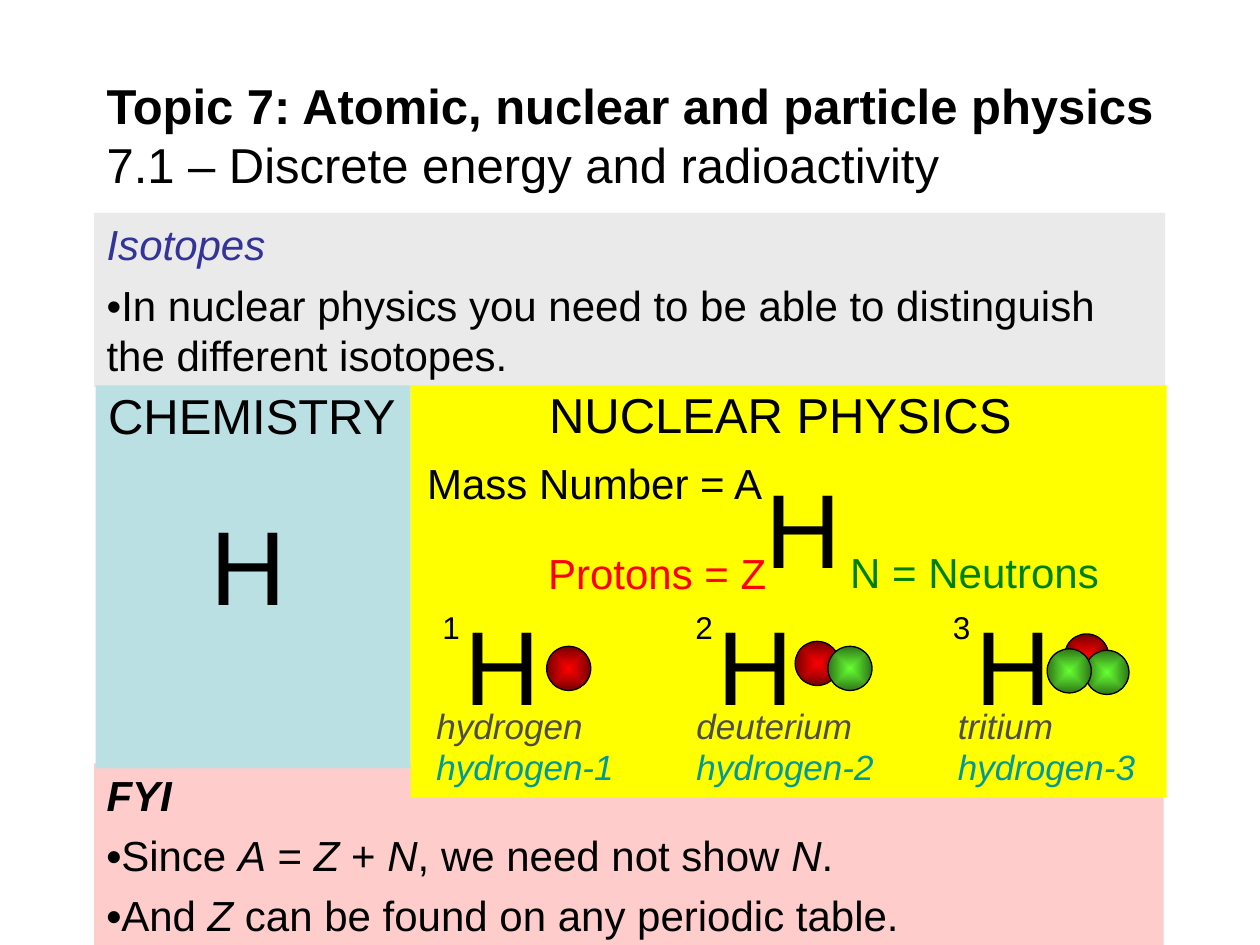
from lxml.etree import SubElement
from pptx import Presentation
from pptx.dml.color import RGBColor
from pptx.enum.shapes import MSO_SHAPE as Kind
from pptx.enum.text import MSO_ANCHOR as Anchor, MSO_AUTO_SIZE as Fit, PP_ALIGN as Align
from pptx.oxml.ns import qn
from pptx.util import Cm, Pt

BLACK, GREY, TEAL = "000000", "4D4D4D", "009999"
RED, GREEN = ("FF0000", "760000"), ("66FF33", "2F7618")

# Panels: left, top, width, height in cm, fill, paragraphs.
# A paragraph is a list of (text, style, colour); style holds b and/or i.
PANELS = [
    (1.9, 15.39, 21.56, 3.66, "FFCCCC", [
        [("FYI", "bi", BLACK)],
        [("•", "b", BLACK), ("Since ", "", BLACK), ("A", "i", BLACK),
         (" = ", "", BLACK), ("Z", "i", BLACK), (" + ", "", BLACK),
         ("N", "i", BLACK), (", we need not show ", "", BLACK),
         ("N", "i", BLACK), (".", "", BLACK)],
        [("•", "b", BLACK), ("And ", "", BLACK), ("Z", "i", BLACK),
         (" can be found on any periodic table.", "", BLACK)]]),
    (1.9, 4.29, 21.59, 3.51, "EAEAEA", [
        [("Isotopes", "i", "333399")],
        [("•In nuclear physics you need to be able to distinguish "
          "the different isotopes.", "", BLACK)]]),
    (1.93, 7.77, 6.35, 7.72, "BBE0E3", []),
    (8.28, 7.77, 15.24, 8.31, "FFFF00", []),
]

# Labels: text, left, top, width, height in cm, size, colour
LABELS = [
    ("CHEMISTRY", 1.93, 7.65, 6.32, 1.45, 28, BLACK),
    ("H", 3.99, 9.96, 2.03, 2.79, 60, BLACK),
    ("NUCLEAR PHYSICS", 10.82, 7.62, 9.83, 1.45, 28, BLACK),
    ("H", 15.19, 9.22, 2.03, 2.79, 60, BLACK),
    ("Mass Number = A", 8.36, 9.09, 7.32, 1.27, 24, BLACK),
    ("Protons = Z", 10.8, 10.92, 4.9, 1.27, 24, "FF0000"),
    ("N = Neutrons", 16.89, 10.9, 5.54, 1.27, 24, "008000"),
]

# Isotopes: mass, left of H, name, left and width of name, nucleons (left, top, colours)
ISOTOPES = [
    (1, 9.12, "hydrogen", 8.55, 3.45, [(11.02, 13.03, RED)]),
    (2, 14.22, "deuterium", 13.79, 3.66, [(16.03, 12.93, RED), (16.69, 13.03, GREEN)]),
    (3, 19.41, "tritium", 19.06, 2.44,
     [(21.46, 12.78, RED), (21.87, 13.11, GREEN), (21.11, 13.08, GREEN)]),
]

TITLE = "Topic 7: Atomic, nuclear and particle physics\v7.1 – Discrete energy and radioactivity"

deck = Presentation()
deck.slide_width, deck.slide_height = Cm(25.4), Cm(19.05)
slide = deck.slides.add_slide(deck.slide_layouts[6])
shapes = slide.shapes


def rgb(code):
    return RGBColor.from_string(code)


def style(run, size, color, marks=""):
    font = run.font
    font.name, font.size, font.color.rgb = "Arial", Pt(size), rgb(color)
    font.bold, font.italic = "b" in marks, "i" in marks


def panel(left, top, width, height, fill, paras):
    box = shapes.add_shape(Kind.RECTANGLE, Cm(left), Cm(top), Cm(width), Cm(height))
    box.shadow.inherit = False
    box.fill.solid()
    box.fill.fore_color.rgb = rgb(fill)
    box.line.fill.background()
    frame = box.text_frame
    frame.vertical_anchor = Anchor.TOP
    for n, parts in enumerate(paras):
        para = frame.add_paragraph() if n else frame.paragraphs[0]
        para.alignment = Align.LEFT
        para.space_before = Pt(5.5)
        for text, marks, color in parts:
            run = para.add_run()
            run.text = text
            style(run, 24, color, marks)


def label(text, left, top, width, height, size, color, marks=""):
    box = shapes.add_textbox(Cm(left), Cm(top), Cm(width), Cm(height))
    frame = box.text_frame
    frame.word_wrap = False
    frame.auto_size = Fit.SHAPE_TO_FIT_TEXT
    frame.text = text
    style(frame.paragraphs[0].runs[0], size, color, marks)


def ball(left, top, colors):
    """Draw a nucleon shaded from its centre outwards."""
    dot = shapes.add_shape(Kind.OVAL, Cm(left), Cm(top), Cm(0.89), Cm(0.89))
    dot.shadow.inherit = False
    dot.line.color.rgb, dot.line.width = rgb(BLACK), Pt(0.75)
    dot.fill.gradient()
    for stop, color in zip(dot.fill.gradient_stops, colors):
        stop.color.rgb = rgb(color)
    grad = dot.element.spPr.find(qn("a:gradFill"))
    grad.remove(grad.find(qn("a:lin")))
    shade = SubElement(grad, qn("a:path"), {"path": "shape"})
    SubElement(shade, qn("a:fillToRect"), dict.fromkeys("ltrb", "50000"))


for row in PANELS:
    panel(*row)
for row in LABELS:
    label(*row)
for mass, left, name, edge, width, balls in ISOTOPES:
    label("H", left, 11.99, 2.03, 2.79, 60, BLACK)
    label(str(mass), left - 0.45, 12.13, 0.86, 1.02, 18, BLACK)
    label(name, edge, 14.07, width, 1.09, 20, GREY, "i")
    for place in balls:
        ball(*place)
    label(f"hydrogen-{mass}", edge, 14.91, 4.09, 1.09, 20, TEAL, "i")

title = shapes.add_textbox(Cm(1.9), Cm(1.47), Cm(22.2), Cm(2.49)).text_frame
title.word_wrap = True
title.vertical_anchor = Anchor.MIDDLE
title.text = TITLE
for run, marks in zip(title.paragraphs[0].runs, ("b", "")):
    style(run, 28, BLACK, marks)

deck.save("out.pptx")
